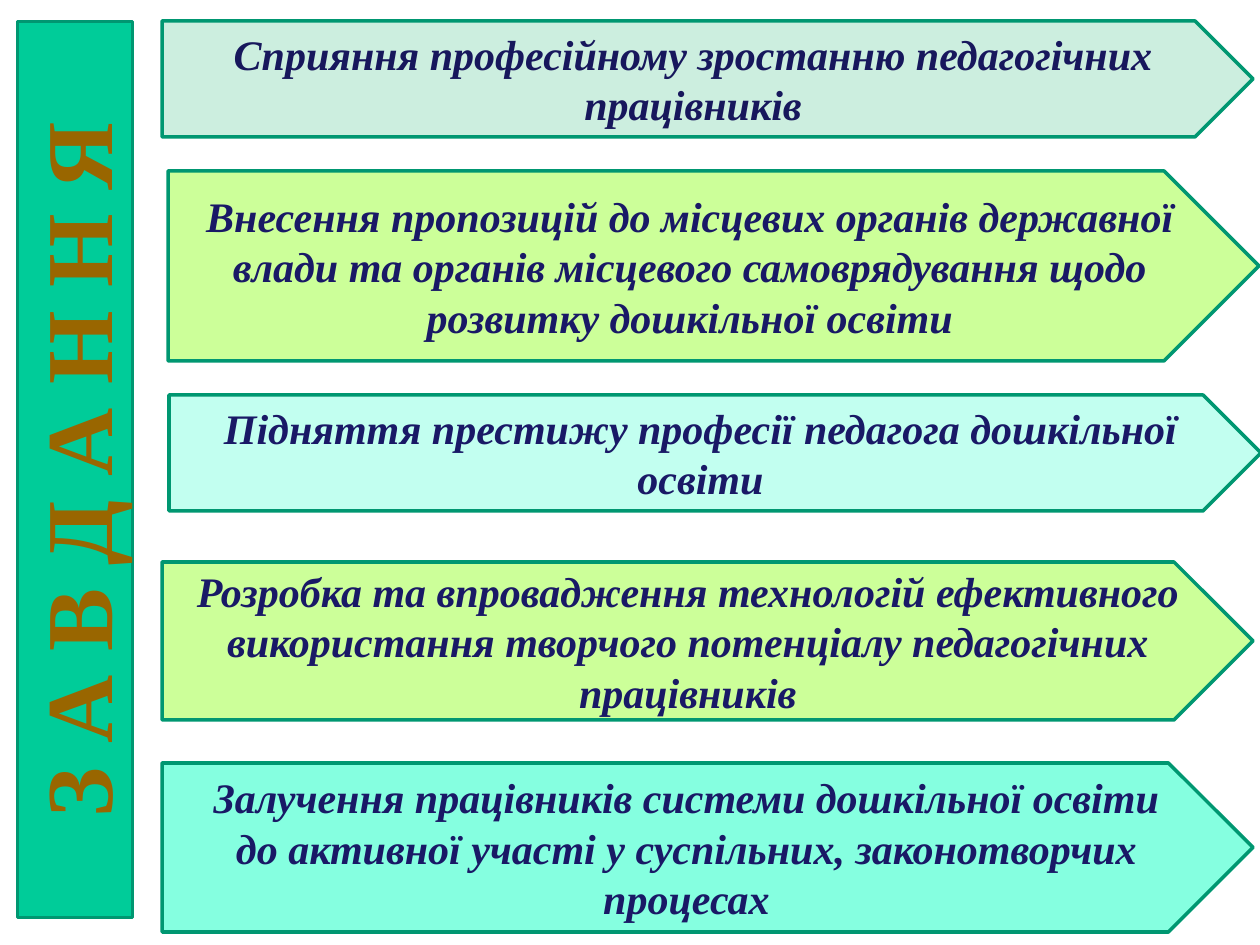
from pptx import Presentation
from pptx.dml.color import RGBColor
from pptx.enum.shapes import MSO_SHAPE
from pptx.enum.text import MSO_ANCHOR, PP_ALIGN
from pptx.util import Pt

PX = 914400 / 126
RECT, ARROW = MSO_SHAPE.RECTANGLE, MSO_SHAPE.PENTAGON
MIDDLE, CENTER = MSO_ANCHOR.MIDDLE, PP_ALIGN.CENTER

HEX = {
    "line": "009771",
    "band": "00CC99",
    "title": "996600",
    "dark": "17175C",
    "navy": "191966",
    "mint": "CCEEDF",
    "lime": "CCFF99",
    "ice": "C2FFF0",
    "aqua": "85FFE0",
}

# left, top, width, height, fill, text colour, text
TASKS = [
    (162, 21, 1091, 116, "mint", "dark",
     "Cприяння професійному зростанню педагогічних працівників"),
    (168, 171, 1091, 190, "lime", "navy",
     "Внесення пропозицій до місцевих органів державної влади "
     "та органів місцевого самоврядування щодо розвитку дошкільної освіти"),
    (169, 395, 1092, 116, "ice", "navy",
     "Підняття престижу професії педагога дошкільної освіти"),
    (162, 562, 1091, 158, "lime", "navy",
     "Розробка та впровадження технологій ефективного "
     "використання творчого потенціалу педагогічних працівників"),
    (162, 763, 1091, 169, "aqua", "navy",
     "Залучення працівників системи дошкільної освіти\n"
     "до активної участі у суспільних, законотворчих процесах"),
]


def color(name):
    return RGBColor.from_string(HEX[name])


def add_box(kind, left, top, width, height, fill, ink, text, size, italic):
    """Add an outlined shape with bold centred text and return it."""
    box = slide.shapes.add_shape(
        kind, *(round(n * PX) for n in (left, top, width, height)))
    box.shadow.inherit = False
    box.fill.solid()
    box.fill.fore_color.rgb = color(fill)
    box.line.color.rgb = color("line")
    box.line.width = Pt(2)
    frame = box.text_frame
    frame.word_wrap = True
    frame.vertical_anchor = MIDDLE
    frame.text = text
    for para in frame.paragraphs:
        para.alignment = CENTER
        for run in para.runs:
            font = run.font
            font.name = "Times New Roman"
            font.size = Pt(size)
            font.bold = True
            font.italic = italic
            font.color.rgb = color(ink)
    return box


deck = Presentation()
deck.slide_width = round(1260 * PX)
deck.slide_height = round(945 * PX)
slide = deck.slides.add_slide(deck.slide_layouts[6])

for task in TASKS:
    add_box(ARROW, *task, 24, True)

band = add_box(RECT, -373, 412, 896, 115, "band", "title",
               "З А В Д А Н Н Я", 54, False)
band.rotation = 270

deck.save("out.pptx")
